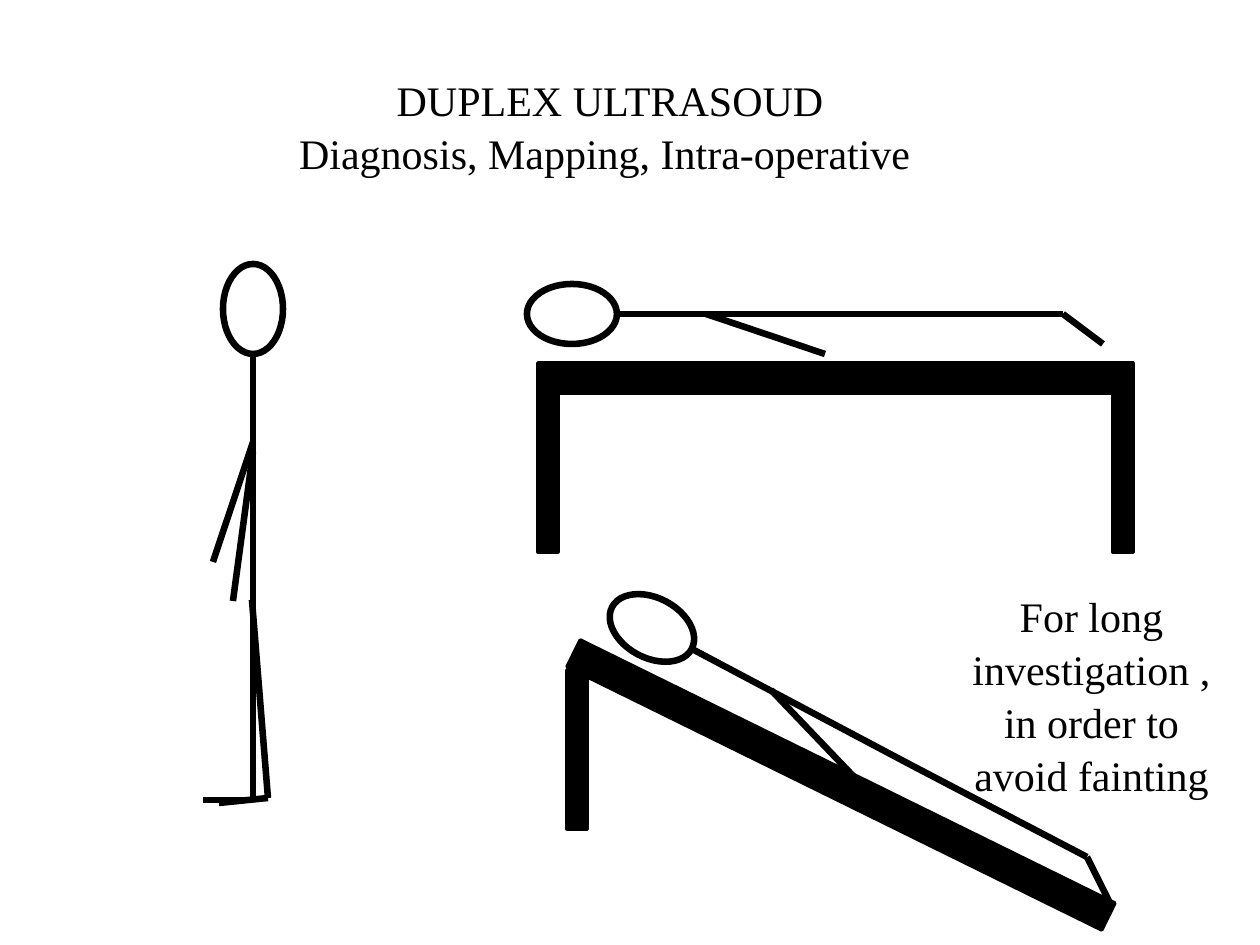
import itertools
import pptx
import pptx.dml.color
import pptx.enum.shapes
import pptx.enum.text
import pptx.util
from lxml import etree

SCALE = 914400 // 126
BLACK = pptx.dml.color.RGBColor(0, 0, 0)
FONT = {"name": "Times New Roman", "size": pptx.util.Pt(24), "bold": False}
HEAD_SIZE = (90, 60)
LEG_SIZE = (20, 159)
SHAPES = pptx.enum.shapes.MSO_SHAPE

TITLE = ["DUPLEX ULTRASOUD", "Diagnosis, Mapping, Intra-operative "]
NOTE = ["For long investigation , in order to avoid fainting"]

# left, top, width, height, rotation
TABLE_TOPS = [(538, 363, 595, 30, 0), (543, 770, 596, 30, 26.2)]
LEG_CORNERS = [(538, 393), (1113, 393), (567, 670)]

# each limb is a chain of joints
FIGURES = [
    {"head": (572, 314, 0),
     "limbs": [[(617, 314), (864, 314), (1063, 314), (1103, 344)],
               [(706, 314), (825, 354)]]},
    {"head": (652, 628, 27.7),
     "limbs": [[(692, 649), (911, 765), (1087, 857), (1109, 901)],
               [(771, 690), (858, 781)]]},
    {"head": (253, 309, 90),
     "limbs": [[(253, 354), (253, 601), (253, 800), (203, 800)],
               [(253, 442), (213, 562)],
               [(253, 452), (233, 601)],
               [(252, 600), (268, 798), (219, 803)]]},
]


def px(*values):
    return [round(v * SCALE) for v in values]


def add_solid(shapes, kind, box, rotation, weight, filled):
    s = shapes.add_shape(kind, *px(*box))
    s.rotation = rotation
    s.shadow.inherit = False
    s.line.color.rgb = BLACK
    s.line.width = pptx.util.Pt(weight)
    if filled:
        s.fill.solid()
        s.fill.fore_color.rgb = BLACK
    else:
        s.fill.background()


def add_limb(shapes, joints):
    for start, end in itertools.pairwise(joints):
        c = shapes.add_connector(
            pptx.enum.shapes.MSO_CONNECTOR.STRAIGHT, *px(*start, *end))
        c.line.color.rgb = BLACK
        c.line.width = pptx.util.Pt(3.75)
        etree.SubElement(c._element.spPr, pptx.oxml.ns.qn("a:effectLst"))


def add_figure(shapes, figure):
    group = shapes.add_group_shape().shapes
    x, y, rotation = figure["head"]
    w, h = HEAD_SIZE
    add_solid(group, SHAPES.OVAL, (x - w / 2, y - h / 2, w, h),
              rotation, 3.75, False)
    for joints in figure["limbs"]:
        add_limb(group, joints)


def write(s, lines):
    tf = s.text_frame
    tf.word_wrap = True
    tf.auto_size = pptx.enum.text.MSO_AUTO_SIZE.NONE
    tf.vertical_anchor = pptx.enum.text.MSO_ANCHOR.TOP
    for i, line in enumerate(lines):
        p = tf.paragraphs[0] if i == 0 else tf.add_paragraph()
        p.alignment = pptx.enum.text.PP_ALIGN.CENTER
        p.line_spacing = 1.05
        r = p.add_run()
        r.text = line
        for key, value in FONT.items():
            setattr(r.font, key, value)
        r.font.color.rgb = BLACK


def main():
    prs = pptx.Presentation()
    prs.slide_width, prs.slide_height = px(1260, 945)
    slide = prs.slides.add_slide(prs.slide_layouts[5])

    title = slide.shapes.title
    title.left, title.top, title.width, title.height = px(154, 66, 912, 115)
    write(title, TITLE)

    for *box, rotation in TABLE_TOPS:
        add_solid(slide.shapes, SHAPES.RECTANGLE, box, rotation, 2, True)
    for corner in LEG_CORNERS:
        add_solid(slide.shapes, SHAPES.RECTANGLE, (*corner, *LEG_SIZE),
                  0, 2, True)
    for figure in FIGURES:
        add_figure(slide.shapes, figure)

    write(slide.shapes.add_textbox(*px(948, 582, 287, 217)), NOTE)
    prs.save("out.pptx")


if __name__ == "__main__":
    main()
